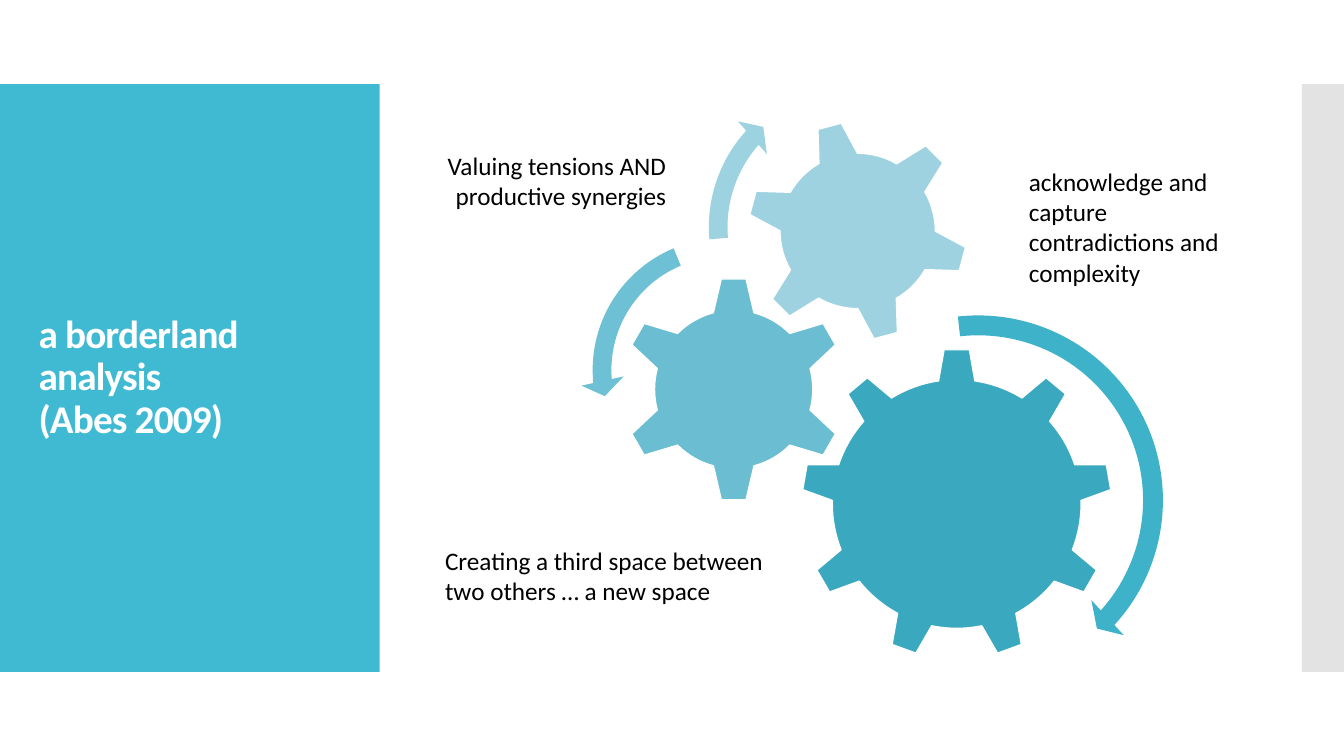
import pptx
import pptx.dml.color
import pptx.enum.shapes
import pptx.enum.text
import pptx.oxml
import pptx.oxml.ns
import pptx.util

RGBColor = pptx.dml.color.RGBColor
SHAPE = pptx.enum.shapes.MSO_SHAPE
ALIGN = pptx.enum.text.PP_ALIGN
ANCHOR = pptx.enum.text.MSO_ANCHOR
AUTO_SIZE = pptx.enum.text.MSO_AUTO_SIZE

WHITE = RGBColor(0xFF, 0xFF, 0xFF)
BLACK = RGBColor(0x00, 0x00, 0x00)
PANEL_BLUE = RGBColor(0x40, 0xBA, 0xD2)
STRIP_GREY = RGBColor(0xC8, 0xC8, 0xC8)
GEAR_DARK = RGBColor(0x3A, 0xA9, 0xBF)
GEAR_MEDIUM = RGBColor(0x6B, 0xBE, 0xD1)
GEAR_LIGHT = RGBColor(0x9E, 0xD2, 0xE1)
ARROW_DARK = RGBColor(0x3D, 0xB2, 0xC9)
ARROW_MEDIUM = RGBColor(0x6E, 0xC1, 0xD4)
ARROW_LIGHT = RGBColor(0x9D, 0xD2, 0xE1)

deck = pptx.Presentation()
deck.slide_width = pptx.util.Inches(13.33)
deck.slide_height = pptx.util.Inches(7.5)
page = deck.slides.add_slide(deck.slide_layouts[5])

# All lengths are in cells of a grid of 16 columns by 9 rows
COLUMN = deck.slide_width / 16
ROW = deck.slide_height / 9


def add_figure(kind, left, top, width, height, fill):
    figure = page.shapes.add_shape(
        kind, int(left * COLUMN), int(top * ROW), int(width * COLUMN), int(height * ROW))
    figure.shadow.inherit = False
    figure.fill.solid()
    figure.fill.fore_color.rgb = fill
    figure.line.fill.background()
    return figure


def write(box, text, size=18, color=BLACK, bold=False, align=ALIGN.LEFT,
          anchor=ANCHOR.TOP, line_spacing=1.0):
    frame = box.text_frame
    frame.word_wrap = True
    frame.auto_size = AUTO_SIZE.NONE
    frame.vertical_anchor = anchor
    frame.text = text
    para = frame.paragraphs[0]
    para.alignment = align
    para.line_spacing = line_spacing
    for span in para.runs:
        span.font.name = "Calibri"
        span.font.size = pptx.util.Pt(size)
        span.font.bold = bold
        span.font.color.rgb = color


# Side panels
add_figure(SHAPE.RECTANGLE, 0, 1, 4.52, 7, PANEL_BLUE)
strip = add_figure(SHAPE.RECTANGLE, 15.5, 1, 0.5, 7, STRIP_GREY)
strip_color = strip.fill._xPr.find(".//" + pptx.oxml.ns.qn("a:srgbClr"))
strip_color.append(pptx.oxml.parse_xml(
    '<a:alpha %s val="50000"/>' % pptx.oxml.ns.nsdecls("a")))

# Title, brought in front of the blue panel
title = page.shapes.title
page.shapes._spTree.append(title._element)
title.left, title.top = int(0.34 * COLUMN), int(1.48 * ROW)
title.width, title.height = int(3.86 * COLUMN), int(6.04 * ROW)
write(title, "a borderland analysis \v(Abes 2009)", size=28, color=WHITE, bold=True,
      anchor=ANCHOR.MIDDLE, line_spacing=0.9)
for span in title.text_frame.paragraphs[0].runs:
    span.font._element.set("spc", "-60")

# Gears: kind, left, top, size, rotation, fill
gears = [
    (SHAPE.GEAR_9, 9.54, 4.15, 3.7, 0, GEAR_DARK),
    (SHAPE.GEAR_6, 7.39, 3.29, 2.69, 0, GEAR_MEDIUM),
    (SHAPE.GEAR_6, 8.89, 1.43, 2.64, 345, GEAR_LIGHT),
]
for kind, left, top, size, rotation, fill in gears:
    gear = add_figure(kind, left, top, size, size, fill)
    gear.rotation = rotation
    gear.line.color.rgb = WHITE
    gear.line.width = pptx.util.Pt(0.85)

# Turning arrows: kind, left, top, size, fill, adjustments
arrows = [
    (SHAPE.CIRCULAR_ARROW, 9.28, 3.59, 4.73, ARROW_DARK,
     (0.05, 2.99, 25.35, 158.22, 0.06)),
    (SHAPE.LEFT_CIRCULAR_ARROW, 6.91, 2.69, 3.43, ARROW_MEDIUM,
     (0.065, 4.3, 104.89, 148.38, 0.075)),
    (SHAPE.CIRCULAR_ARROW, 8.29, 0.85, 3.71, ARROW_LIGHT,
     (0.06, 3.94, 133.14, 105.08, 0.07)),
]
for kind, left, top, size, fill, adjustments in arrows:
    arrow = add_figure(kind, left, top, size, size, fill)
    for index, value in enumerate(adjustments):
        arrow.adjustments[index] = value

# Captions: left, top, width, height, alignment, text
captions = [
    (4.7, 1.73, 3.35, 0.85, ALIGN.RIGHT, "Valuing tensions AND productive synergies"),
    (12.13, 1.92, 2.9, 1.57, ALIGN.LEFT,
     "acknowledge and capture contradictions and complexity"),
    (5.18, 6.43, 4.38, 0.85, ALIGN.LEFT,
     "Creating a third space between two others … a new space"),
]
for left, top, width, height, align, text in captions:
    box = page.shapes.add_textbox(
        int(left * COLUMN), int(top * ROW), int(width * COLUMN), int(height * ROW))
    write(box, text, align=align)

deck.save("out.pptx")
